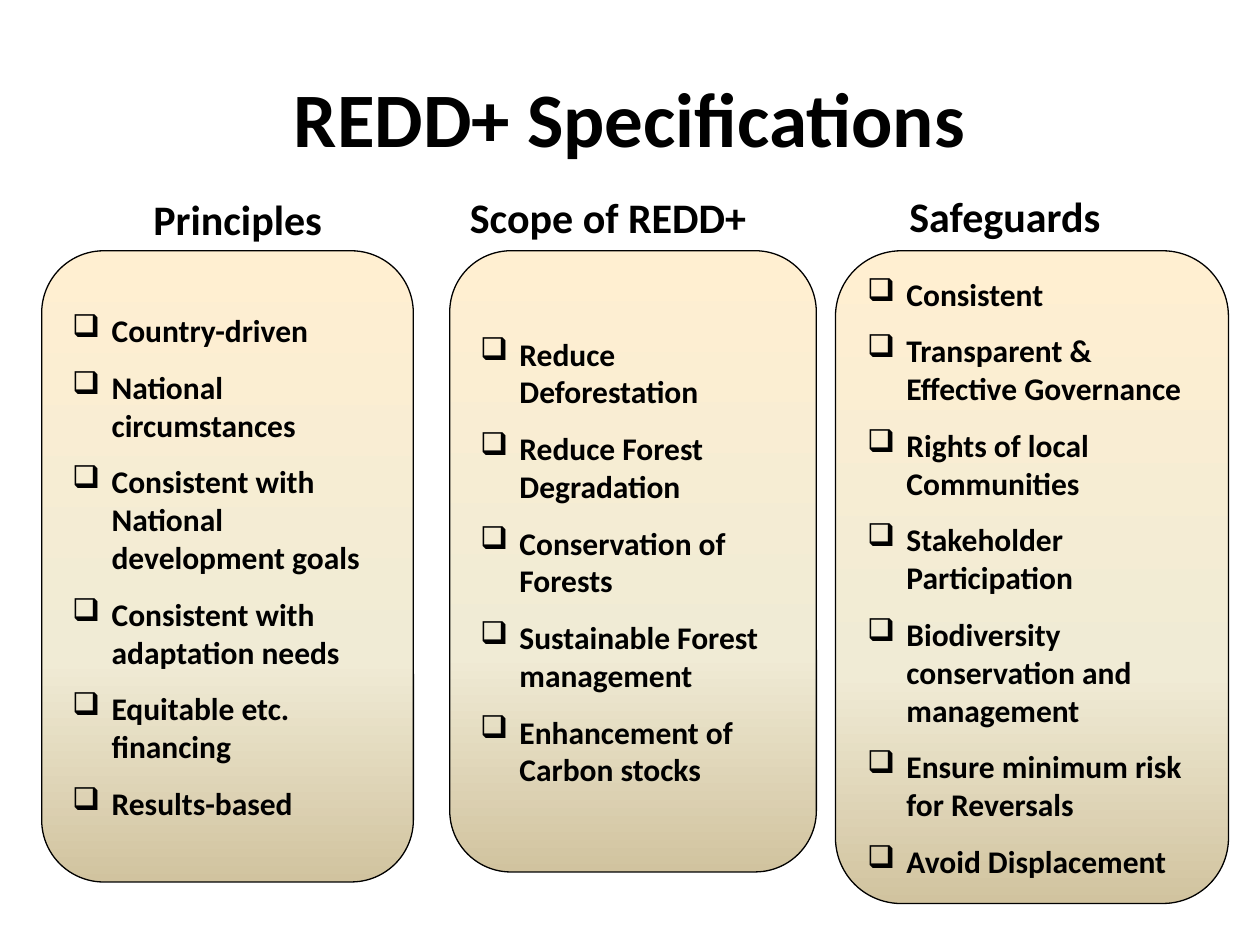
from copy import deepcopy

from pptx import Presentation
from pptx.dml.color import RGBColor
from pptx.enum.shapes import MSO_SHAPE
from pptx.enum.text import MSO_ANCHOR, MSO_AUTO_SIZE, PP_ALIGN
from pptx.oxml.ns import qn
from pptx.util import Pt
from lxml.etree import SubElement

# Content: heading, its (left, top, width), panel (left, width, height), items
TITLE = "REDD+ Specifications"
COLUMNS = [
    ("Principles", (80.6, 107.3, 111), (23.8, 212.4, 360.7), [
        "Country-driven",
        "National circumstances",
        "Consistent with National development goals",
        "Consistent with adaptation needs",
        "Equitable etc. financing",
        "Results-based",
    ]),
    ("Scope of REDD+", (261.4, 105.8, 174.2), (257, 209.5, 355), [
        "Reduce Deforestation",
        "Reduce Forest Degradation",
        "Conservation of Forests",
        "Sustainable Forest management",
        "Enhancement of Carbon stocks",
    ]),
    ("Safeguards", (512.6, 105.1, 124.6), (477.4, 224.6, 373), [
        "Consistent",
        "Transparent & Effective Governance",
        "Rights of local Communities",
        "Stakeholder Participation",
        "Biodiversity conservation and management",
        "Ensure minimum risk for Reversals",
        "Avoid Displacement",
    ]),
]
PANEL_TOP = 143.3
HEADING_HEIGHT = 36
ITEM_SIZE = 18
INDENT = 22.5
GRADIENT = [(0, "FFEFD1"), (0.65, "F0EBD5"), (1, "D1C39F")]
BLACK = "000000"


def color(hex_text):
    return RGBColor.from_string(hex_text)


def format_text(frame, size):
    for para in frame.paragraphs:
        for span in para.runs:
            span.font.name = "Calibri"
            span.font.size = Pt(size)
            span.font.bold = True
            span.font.color.rgb = color(BLACK)


def add_bullet(para):
    properties = para._p.get_or_add_pPr()
    properties.set("marL", str(Pt(INDENT)))
    properties.set("indent", str(-Pt(INDENT)))
    SubElement(properties, qn("a:buChar")).set("char", "❑")


def fill_gradient(shape):
    shape.fill.gradient()
    shape.fill.gradient_angle = 270
    first_stop = shape._element.spPr.find(".//" + qn("a:gs"))
    first_stop.addnext(deepcopy(first_stop))
    for stop, (position, hex_text) in zip(shape.fill.gradient_stops, GRADIENT):
        stop.position = position
        stop.color.rgb = color(hex_text)


def add_panel(page, left, width, height, items):
    panel = page.shapes.add_shape(MSO_SHAPE.ROUNDED_RECTANGLE, Pt(left),
                                  Pt(PANEL_TOP), Pt(width), Pt(height))
    panel.adjustments[0] = 0.167
    panel.shadow.inherit = False
    fill_gradient(panel)
    panel.line.color.rgb = color(BLACK)
    panel.line.width = Pt(0.75)

    frame = panel.text_frame
    frame.word_wrap = True
    frame.vertical_anchor = MSO_ANCHOR.MIDDLE
    frame.text = "\n".join(items)
    for para in frame.paragraphs:
        para.alignment = PP_ALIGN.LEFT
        para.space_after = Pt(0.6 * ITEM_SIZE)
        add_bullet(para)
    format_text(frame, ITEM_SIZE)


def add_heading(page, text, left, top, width):
    box = page.shapes.add_textbox(Pt(left), Pt(top), Pt(width), Pt(HEADING_HEIGHT))
    frame = box.text_frame
    frame.word_wrap = False
    frame.auto_size = MSO_AUTO_SIZE.SHAPE_TO_FIT_TEXT
    frame.text = text
    format_text(frame, 24)


def main():
    deck = Presentation()
    deck.slide_width, deck.slide_height = Pt(720), Pt(540)
    page = deck.slides.add_slide(deck.slide_layouts[5])

    # Title
    title = page.shapes.title
    title.left, title.top = Pt(36), Pt(21.6)
    title.width, title.height = Pt(648), Pt(90)
    title.text_frame.text = TITLE
    title.text_frame.vertical_anchor = MSO_ANCHOR.MIDDLE
    title.text_frame.paragraphs[0].alignment = PP_ALIGN.CENTER
    format_text(title.text_frame, 44)

    # Columns
    for heading, heading_place, panel_place, items in COLUMNS:
        add_panel(page, *panel_place, items)
        add_heading(page, heading, *heading_place)

    deck.save("out.pptx")


if __name__ == "__main__":
    main()
